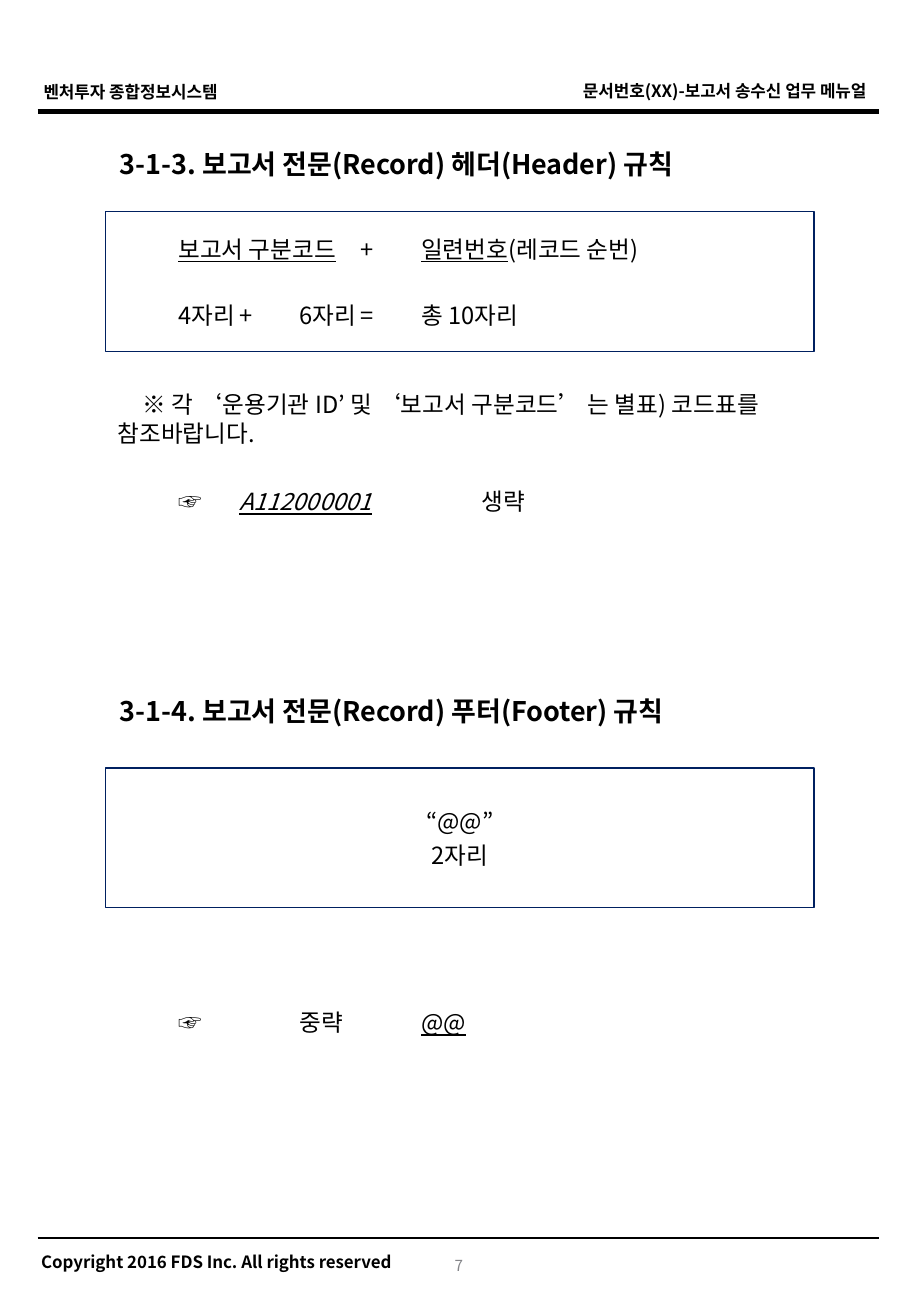
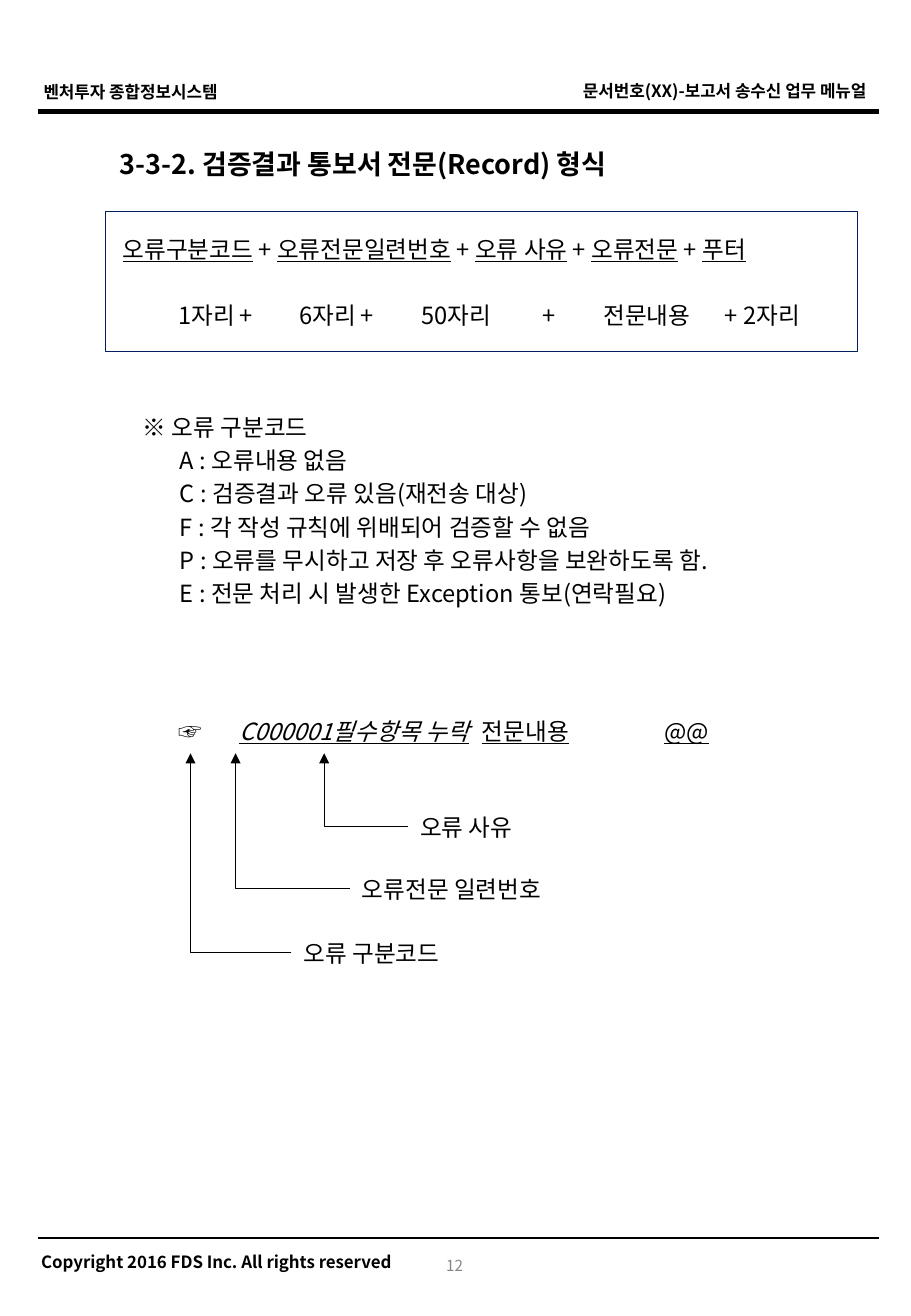
from pptx import Presentation
from pptx.dml.color import RGBColor
from pptx.enum.shapes import MSO_CONNECTOR, MSO_SHAPE
from pptx.enum.text import MSO_ANCHOR, PP_ALIGN
from pptx.oxml.ns import qn
from pptx.util import Pt
from lxml.etree import SubElement

BLACK = RGBColor(0x00, 0x00, 0x00)
NAVY = RGBColor(0x00, 0x20, 0x60)
GRAY = RGBColor(0x84, 0x85, 0x89)
FONT = "Noto Sans CJK KR"
LINE_FACTOR = 1.23
LIST_GAP = 2.4
ROW_GAP = 22
LEFT = 62.6
WIDTH = 420

BODY = {"size": Pt(14)}
TITLE = {"size": Pt(16), "bold": True}
BAND = {"size": Pt(10), "bold": True}
NUMBER = {"size": Pt(9)}
UNDER = {"underline": True}
SLANT = {"underline": True, "italic": True}


def line(*spans, tabs=(), left=0, first=0, before=0, align=PP_ALIGN.LEFT):
    spans = [(span, {}) if isinstance(span, str) else span for span in spans]
    return {"spans": spans, "tabs": tabs, "left": left, "first": first,
            "before": before, "align": align}


def format_para(para, row, size):
    props = para._p.get_or_add_pPr()
    props.set("marL", str(Pt(row["left"])))
    props.set("indent", str(Pt(row["first"])))
    if row["tabs"]:
        stops = SubElement(props, qn("a:tabLst"))
        for stop in row["tabs"]:
            SubElement(stops, qn("a:tab"), pos=str(Pt(stop)), algn="l")
    para.alignment = row["align"]
    para.line_spacing = Pt(round(size.pt * LINE_FACTOR, 1))
    para.space_before = Pt(row["before"])


def fill_text(shape, rows, style, color=BLACK, anchor=MSO_ANCHOR.TOP):
    frame = shape.text_frame
    frame.word_wrap = True
    frame.vertical_anchor = anchor
    for index, row in enumerate(rows):
        para = frame.paragraphs[0] if index == 0 else frame.add_paragraph()
        format_para(para, row, style["size"])
        for text, extra in row["spans"]:
            span = para.add_run()
            span.text = text
            for name, value in {"name": FONT, **style, **extra}.items():
                setattr(span.font, name, value)
            span.font.color.rgb = color
            SubElement(span._r.get_or_add_rPr(), qn("a:ea"), typeface=FONT)
    return shape


def add_text(page, box, rows, style=BODY, color=BLACK, anchor=MSO_ANCHOR.MIDDLE):
    shape = page.shapes.add_textbox(*map(Pt, box))
    return fill_text(shape, rows, style, color, anchor)


def add_line(page, kind, begin, end, width):
    connector = page.shapes.add_connector(kind, *map(Pt, (*begin, *end)))
    connector.line.color.rgb = BLACK
    connector.line.width = Pt(width)
    SubElement(connector._element.spPr, qn("a:effectLst"))
    return connector


def add_frame(page, number):
    for y, width in ((66.2, 3), (733.7, 1.25)):
        add_line(page, MSO_CONNECTOR.STRAIGHT, (22.3, y), (521.3, y), width)
    bands = (
        ((18.7, 44.6, 240, 19.4), "벤처투자 종합정보시스템", PP_ALIGN.LEFT),
        ((17.3, 738, 240, 19.4), "Copyright 2016 FDS Inc. All rights reserved", PP_ALIGN.LEFT),
        ((224.6, 43.9, 296, 19.4), "문서번호(XX)-보고서 송수신 업무 메뉴얼", PP_ALIGN.RIGHT),
    )
    for box, text, align in bands:
        add_text(page, box, [line(text, align=align)], BAND, anchor=MSO_ANCHOR.TOP)
    add_text(page, (246.2, 733.7, 35.3, 25.2), [line(number, align=PP_ALIGN.RIGHT)],
             NUMBER, GRAY, MSO_ANCHOR.BOTTOM)


def add_rule(page, top, title, rows, gap, width=WIDTH):
    add_text(page, (64, top, 433, 28), [line(title)], TITLE, anchor=MSO_ANCHOR.TOP)
    shape = page.shapes.add_shape(MSO_SHAPE.RECTANGLE, *map(Pt, (LEFT, top + gap, width, 82.8)))
    shape.shadow.inherit = False
    shape.fill.background()
    shape.line.color.rgb = NAVY
    shape.line.width = Pt(0.75)
    fill_text(shape, rows, BODY, anchor=MSO_ANCHOR.MIDDLE)


def add_callout(page, box, text, tip):
    label = add_text(page, box, [line(text)])
    left, top, _, height = box
    arrow = add_line(page, MSO_CONNECTOR.ELBOW, (left, top + height / 2), tip, 0.75)
    arrow.begin_connect(label, 1)
    arrow._element.spPr.find(qn("a:prstGeom")).set("prst", "bentConnector2")
    SubElement(arrow.line._get_or_add_ln(), qn("a:tailEnd"), type="triangle")


def build_record_rules(page):
    add_frame(page, "7")
    add_rule(page, 83.5, "3-1-3. 보고서 전문(Record) 헤더(Header) 규칙", [
        line("\t", ("보고서 구분코드", UNDER), "\t+\t", ("일련번호", UNDER), "(레코드 순번)",
             tabs=(39, 148, 172)),
        line("\t4자리\t+\t6자리\t=\t총 10자리", tabs=(86.5, 161.5, 192, 247.5, 268.5),
             before=ROW_GAP),
    ], 41.8)
    add_text(page, (LEFT, 221.8, WIDTH, 51.8), [
        line("※ 각 ‘운용기관 ID’ 및 ‘보고서 구분코드’ 는 별표) 코드표를 참조바랍니다.", first=15)])
    add_text(page, (LEFT, 270.7, WIDTH, 51.8), [
        line("\t☞\t", ("A112000001", SLANT), ("\t", UNDER), "\t생략",
             tabs=(68, 85.5, 312, 315))])
    add_rule(page, 407.5, "3-1-4. 보고서 전문(Record) 푸터(Footer) 규칙", [
        line("“@@”", align=PP_ALIGN.CENTER),
        line("2자리", before=LIST_GAP, align=PP_ALIGN.CENTER),
    ], 47.5)
    add_text(page, (LEFT, 582.5, WIDTH, 45.4), [
        line("\t☞\t", ("\t", UNDER), "중략", ("\t", UNDER), "\t", ("@@", UNDER),
             tabs=(46, 64.5, 194, 333.5, 336.5))])


def build_result_format(page):
    add_frame(page, "12")
    fields = ("오류구분코드", "오류전문일련번호", "오류 사유", "오류전문", "푸터")
    spans = [(field, UNDER) for field in fields]
    joined = [part for span in spans for part in (" + ", span)][1:]
    add_rule(page, 83.5, "3-3-2. 검증결과 통보서 전문(Record) 형식", [
        line(*joined, left=3),
        line("\t1자리\t+\t6자리\t+\t50자리\t+\t전문내용\t+ 2자리",
             tabs=(18.5, 82, 118.5, 190, 207, 267, 281.5, 340), before=ROW_GAP),
    ], 41.8, 445.7)
    codes = ("A : 오류내용 없음", "C : 검증결과 오류 있음(재전송 대상)",
             "F : 각 작성 규칙에 위배되어 검증할 수 없음",
             "P : 오류를 무시하고 저장 후 오류사항을 보완하도록 함.",
             "E : 전문 처리 시 발생한 Exception 통보(연락필요)")
    add_text(page, (LEFT, 236.9, 428.4, 130.3), [
        line("※ 오류 구분코드", left=15),
        *(line(code, left=37, before=LIST_GAP) for code in codes)])
    add_text(page, (LEFT, 406.8, 433.4, 51.8), [
        line("\t☞\t", ("C000001필수항목 누락", SLANT), ("\t전문내용\t", UNDER), "\t", ("@@", UNDER),
             tabs=(35, 53, 267, 358.5, 361.5))])
    callouts = (
        (172.8, 548.6, "오류 구분코드", 113),
        (207.4, 510.5, "오류전문 일련번호", 139.7),
        (241.9, 473.8, "오류 사유", 192.2),
    )
    for left, top, text, tip in callouts:
        add_callout(page, (left, top, 209.5, 31.7), text, (tip, 446.4))


def main():
    deck = Presentation()
    deck.slide_width, deck.slide_height = Pt(540), Pt(779.76)
    for build in (build_record_rules, build_result_format):
        build(deck.slides.add_slide(deck.slide_layouts[6]))
    deck.save("out.pptx")


if __name__ == "__main__":
    main()
